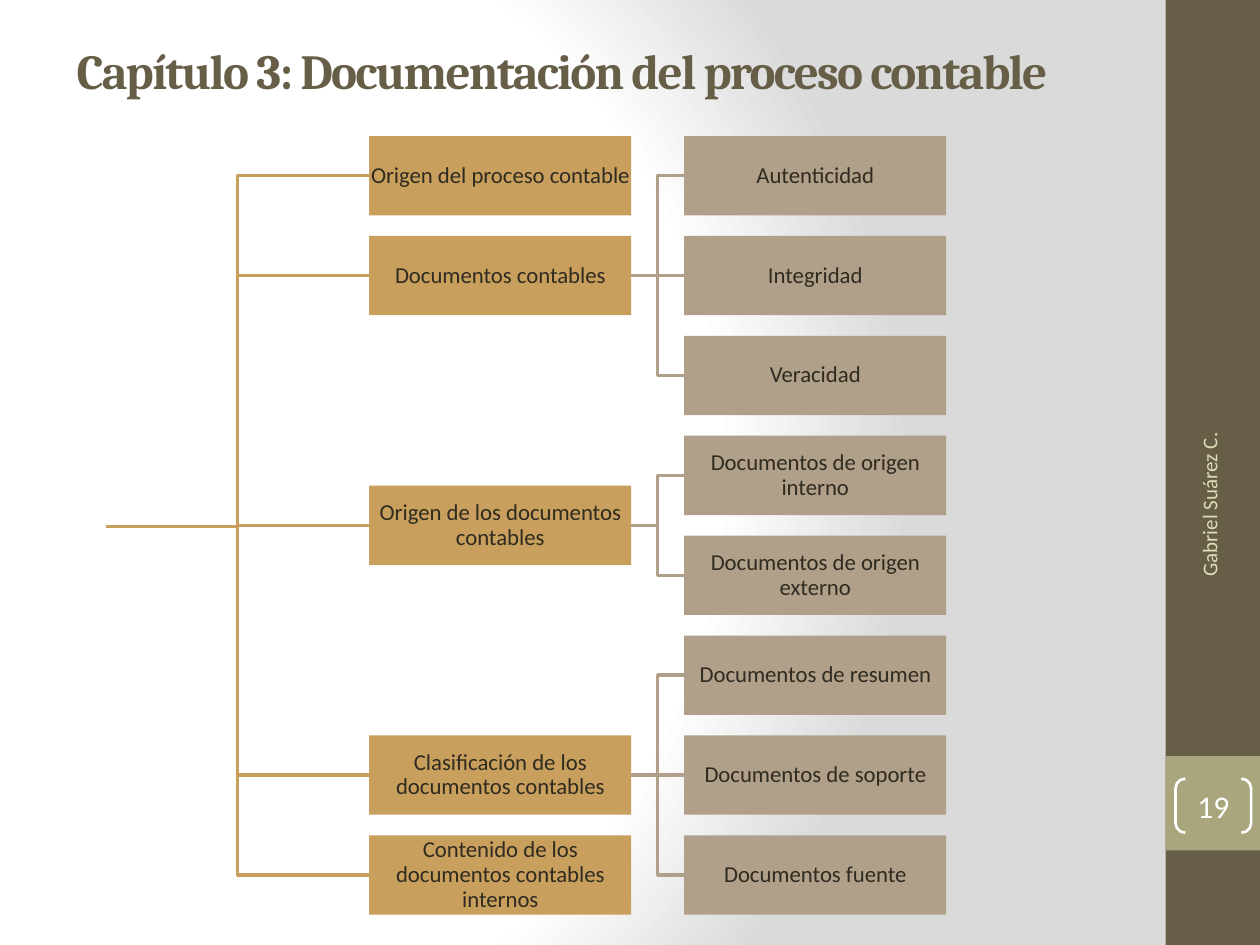
from lxml import etree
from pptx import Presentation
from pptx.dml.color import RGBColor
from pptx.enum.shapes import MSO_CONNECTOR, MSO_SHAPE
from pptx.enum.text import MSO_ANCHOR, PP_ALIGN
from pptx.oxml import parse_xml
from pptx.oxml.ns import nsdecls, qn
from pptx.util import Inches, Pt

RECT, BRACKETS = MSO_SHAPE.RECTANGLE, MSO_SHAPE.DOUBLE_BRACKET
LEFT, CENTER, RIGHT = PP_ALIGN.LEFT, PP_ALIGN.CENTER, PP_ALIGN.RIGHT

TITLE = "Capítulo 3: Documentación del proceso contable"
AUTHOR = "Gabriel Suárez C."
PAGE_NUMBER = "19"
# topic, its row in the grid, its subtopics (one row each, in sequence)
TOPICS = [
    ("Origen del proceso contable", 0, []),
    ("Documentos contables", 1, ["Autenticidad", "Integridad", "Veracidad"]),
    ("Origen de los documentos contables", 3.5,
     ["Documentos de origen interno", "Documentos de origen externo"]),
    ("Clasificación de los documentos contables", 6,
     ["Documentos de resumen", "Documentos de soporte", "Documentos fuente"]),
    ("Contenido de los documentos contables internos", 7, []),
]

COLORS = {"band": "675E47", "badge": "A9A57C", "topic": "C89F5D",
          "subtopic": "B1A089", "text": "2F2B20", "author": "DFDCB7",
          "white": "FFFFFF", "shade": "DADADA"}
TITLE_FONT = {"name": "Cambria", "size": Pt(28), "bold": True}
AUTHOR_FONT = {"name": "Calibri", "size": Pt(12)}
NUMBER_FONT = {"name": "Calibri", "size": Pt(18)}
NODE_FONT = {"name": "Calibri", "size": Pt(13)}

WIDTH, HEIGHT = 10, 7.5
BAND_WIDTH = 0.75
NODE_WIDTH, NODE_HEIGHT = 2.08, 0.63
TOPIC_X, SUBTOPIC_X = 2.93, 5.43
FIRST_ROW, LAST_ROW, ROWS = 1.08, 6.63, 8
ROW_PITCH = (LAST_ROW - FIRST_ROW) / (ROWS - 1)
ROOT = (0.84, 4.18)


def color(name):
    return RGBColor.from_string(COLORS[name])


def paint_background(page):
    stops = "".join(
        f'<a:gs pos="{share * 1000}"><a:srgbClr val="{COLORS[name]}"/></a:gs>'
        for share, name in [(0, "white"), (75, "white"), (100, "shade")])
    page.element.cSld.insert(0, parse_xml(
        f'<p:bg {nsdecls("p", "a")}><p:bgPr><a:gradFill rotWithShape="1">'
        f'<a:gsLst>{stops}</a:gsLst><a:path path="circle">'
        '<a:fillToRect l="20000" t="50000" r="100000" b="50000"/></a:path>'
        '</a:gradFill><a:effectLst/></p:bgPr></p:bg>'))


def add_panel(page, kind, area, fill=None):
    panel = page.shapes.add_shape(kind, *map(Inches, area))
    panel.shadow.inherit = False
    panel.line.fill.background()
    if fill:
        panel.fill.solid()
        panel.fill.fore_color.rgb = color(fill)
    else:
        panel.fill.background()
    return panel


def write(box, text, font, ink, align, margin=None):
    """Put one paragraph of text in a box, centred vertically."""
    frame = box.text_frame
    frame.word_wrap = True
    frame.vertical_anchor = MSO_ANCHOR.MIDDLE
    if margin is not None:
        for side in ("left", "right", "top", "bottom"):
            setattr(frame, f"margin_{side}", Inches(margin))
    para = frame.paragraphs[0]
    para.alignment = align
    span = para.add_run()
    span.text = text
    for key, value in font.items():
        setattr(span.font, key, value)
    span.font.color.rgb = color(ink)
    return span


def row_top(row):
    return FIRST_ROW + row * ROW_PITCH


def row_middle(row):
    return row_top(row) + NODE_HEIGHT / 2


def add_branch(page, start, end, stroke):
    """Join two points with an elbow that turns halfway across."""
    (x1, y1), (x2, y2) = start, end
    if y1 == y2:
        branch = page.shapes.add_connector(
            MSO_CONNECTOR.STRAIGHT, *map(Inches, (x1, y1, x2, y2)))
        etree.SubElement(branch.element.spPr, qn("a:effectLst"))
    else:
        middle = (x1 + x2) / 2
        builder = page.shapes.build_freeform(Inches(x1), Inches(y1))
        corners = [(middle, y1), (middle, y2), (x2, y2)]
        builder.add_line_segments(
            [(Inches(x), Inches(y)) for x, y in corners], close=False)
        branch = builder.convert_to_shape()
        branch.shadow.inherit = False
        branch.fill.background()
    branch.line.color.rgb = color(stroke)
    branch.line.width = Pt(2)


def add_node(page, text, left, row, fill):
    area = (left, row_top(row), NODE_WIDTH, NODE_HEIGHT)
    node = add_panel(page, RECT, area, fill)
    write(node, text, NODE_FONT, "text", CENTER, 0.01)
    node.text_frame.paragraphs[0].line_spacing = 0.9


def add_tree(page):
    nodes, branches = [], []
    subtopic_row = 0
    for topic, row, subtopics in TOPICS:
        nodes.append((topic, TOPIC_X, row, "topic"))
        branches.append((ROOT, (TOPIC_X, row_middle(row)), "topic"))
        for subtopic in subtopics:
            nodes.append((subtopic, SUBTOPIC_X, subtopic_row, "subtopic"))
            branches.append(((TOPIC_X + NODE_WIDTH, row_middle(row)),
                             (SUBTOPIC_X, row_middle(subtopic_row)),
                             "subtopic"))
            subtopic_row += 1
    for branch in reversed(branches):
        add_branch(page, *branch)
    for node in nodes:
        add_node(page, *node)


def add_frame(page):
    """Add the side band with author and page number, and the title."""
    band_x = WIDTH - BAND_WIDTH
    add_panel(page, RECT, (band_x, 0, BAND_WIDTH, HEIGHT), "band")
    add_panel(page, RECT, (band_x, 0.8 * HEIGHT, BAND_WIDTH, BAND_WIDTH), "badge")

    title = page.shapes.add_textbox(*map(Inches, (0.51, 0.13, 8.33, 0.85)))
    span = write(title, TITLE, TITLE_FONT, "band", LEFT)
    span.font._element.set("spc", "-100")

    author = page.shapes.add_textbox(*map(Inches, (8.3, 4.43, 2.59, 0.4)))
    author.rotation = 270
    write(author, AUTHOR, AUTHOR_FONT, "author", RIGHT)

    number = add_panel(page, BRACKETS, (9.33, 6.18, 0.6, 0.43))
    number.adjustments[0] = 0.18
    number.line.color.rgb = color("white")
    number.line.width = Pt(1.5)
    write(number, PAGE_NUMBER, NUMBER_FONT, "white", CENTER, 0)


def main():
    deck = Presentation()
    deck.slide_width, deck.slide_height = Inches(WIDTH), Inches(HEIGHT)
    page = deck.slides.add_slide(deck.slide_layouts[6])
    paint_background(page)
    add_frame(page)
    add_tree(page)
    deck.save("out.pptx")


if __name__ == "__main__":
    main()
